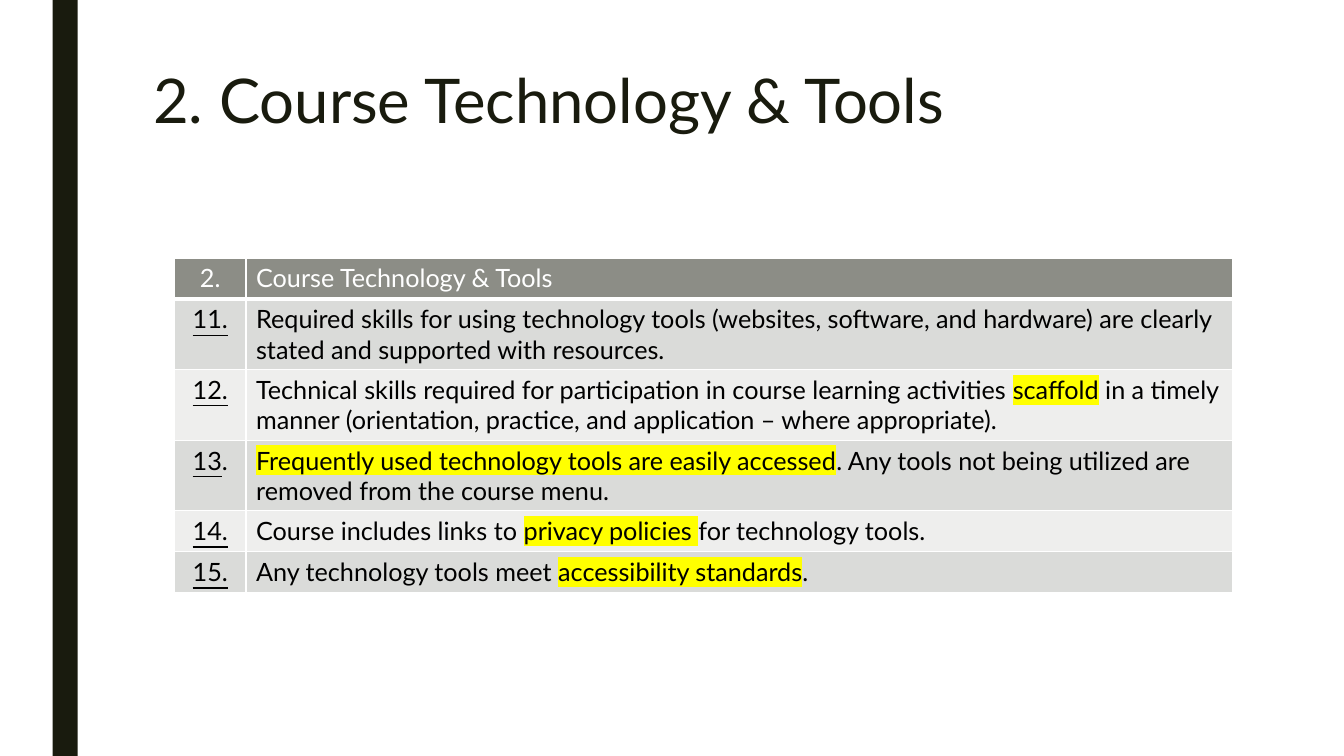
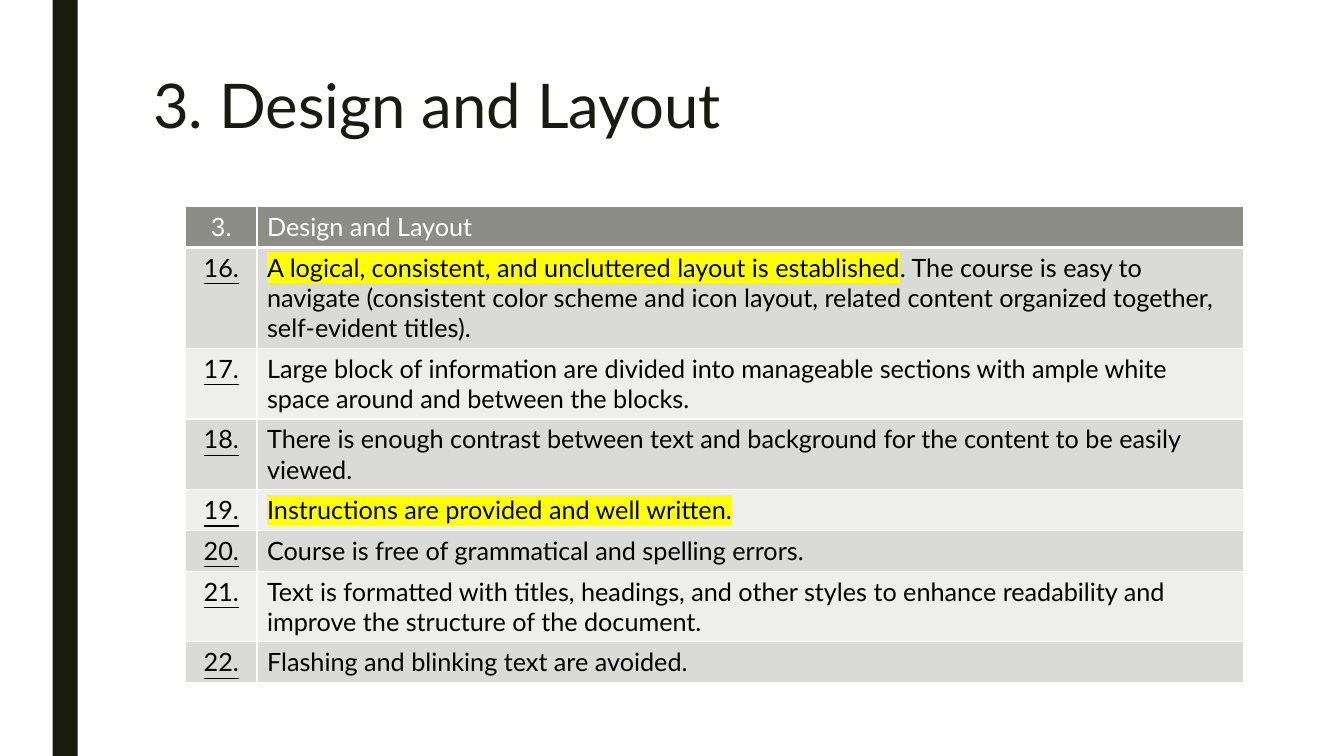
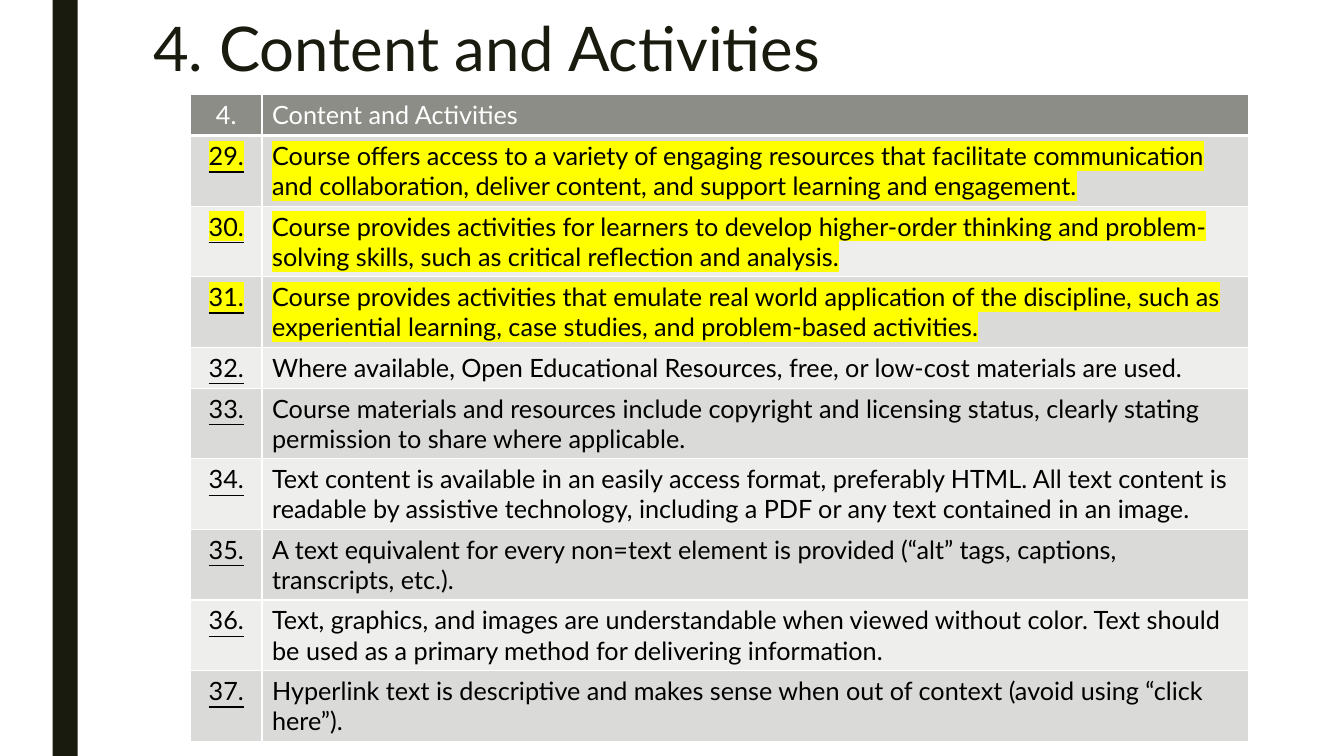
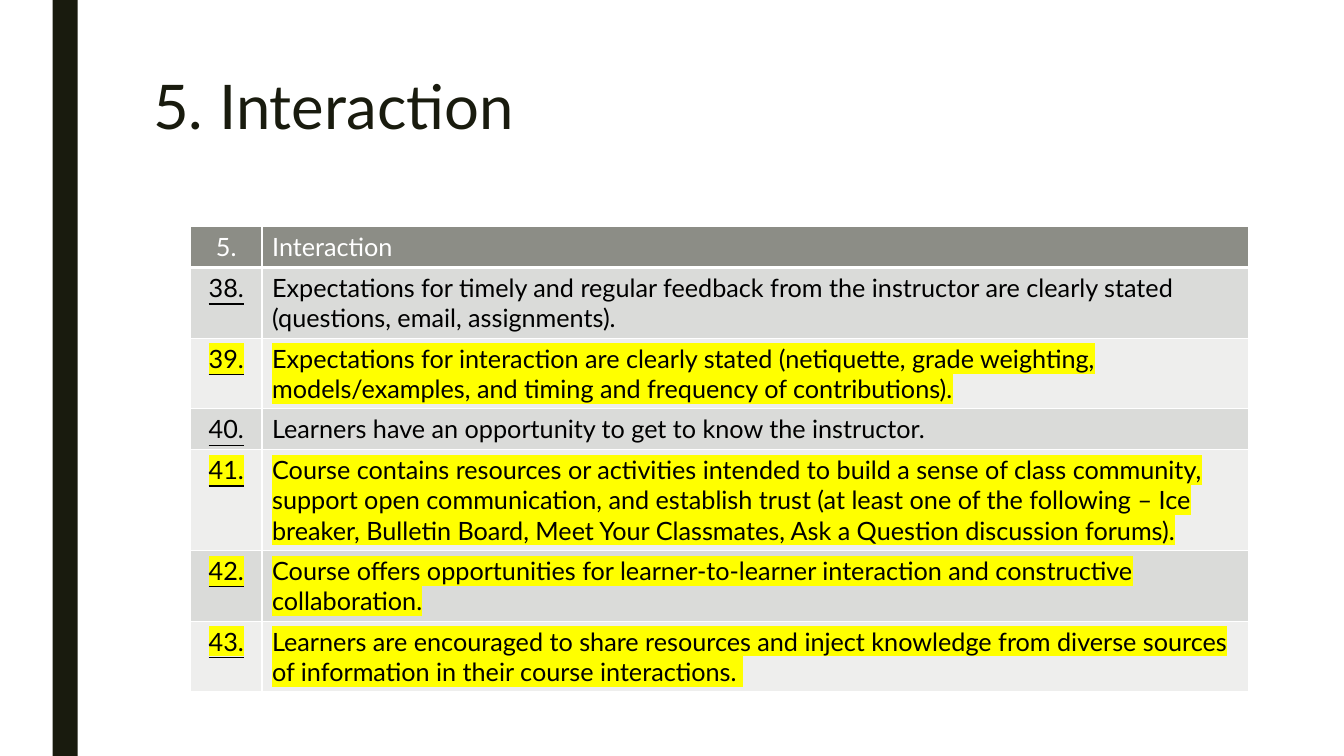
from dataclasses import dataclass

from lxml import etree
from pptx import Presentation
from pptx import util as u
from pptx.dml.color import RGBColor
from pptx.enum import shapes, text
from pptx.oxml import ns

INK = RGBColor(0x19, 0x1B, 0x0E)
BLACK = RGBColor(0, 0, 0)
WHITE = RGBColor(0xFF, 0xFF, 0xFF)
MARKER = RGBColor(0xFF, 0xFF, 0)
HEADER_FILL = RGBColor(0x8C, 0x8D, 0x86)
BAND_FILLS = RGBColor(0xDA, 0xDB, 0xD9), RGBColor(0xEE, 0xEE, 0xED)

WIDTH, HEIGHT = u.Inches(13.33), u.Inches(7.5)
GRID_COLUMNS, GRID_ROWS = 128, 72

BAR_LEFT, BAR_COLUMNS = 5, 2.4
TITLE_LEFT, TITLE_COLUMNS, TITLE_ROWS = 13.63, 100.8, 15.55
NUMBER_COLUMNS = 6.82
CRITERION_COLUMNS = TITLE_COLUMNS - NUMBER_COLUMNS
LINE_ROWS = 3.89

TITLE_FONT = {"name": "Lato", "size": u.Pt(44), "bold": False}
TABLE_FONT = {"name": "Lato", "size": u.Pt(18), "bold": False}


@dataclass
class Criterion:
    """One table row; text between bars is highlighted."""
    wording: str
    number_marked: bool = False
    dot_underlined: bool = True


@dataclass
class Section:
    number: int
    name: str
    title_top: float
    table_left: float
    table_top: float
    first_criterion: int
    criteria: list[Criterion]


SECTIONS = [
    Section(2, "Course Technology & Tools", 6.24, 16.61, 24.58, 11, [
        Criterion("Required skills for using technology tools (websites, software, and hardware) "
                  "are clearly stated and supported with resources."),
        Criterion("Technical skills required for participation in course learning activities "
                  "|scaffold| in a timely manner (orientation, practice, and application – "
                  "where appropriate)."),
        Criterion("|Frequently used technology tools are easily accessed|. Any tools not being "
                  "utilized are removed from the course menu.", dot_underlined=False),
        Criterion("Course includes links to |privacy policies |for technology tools."),
        Criterion("Any technology tools meet |accessibility standards|."),
    ]),
    Section(3, "Design and Layout", 6.72, 17.66, 19.68, 16, [
        Criterion("|A logical, consistent, and uncluttered layout is established|. The course is "
                  "easy to navigate (consistent color scheme and icon layout, related content "
                  "organized together, self-evident titles)."),
        Criterion("Large block of information are divided into manageable sections with ample "
                  "white space around and between the blocks."),
        Criterion("There is enough contrast between text and background for the content to be "
                  "easily viewed."),
        Criterion("|Instructions are provided and well written.|"),
        Criterion("Course is free of grammatical and spelling errors."),
        Criterion("Text is formatted with titles, headings, and other styles to enhance "
                  "readability and improve the structure of the document."),
        Criterion("Flashing and blinking text are avoided."),
    ]),
    Section(4, "Content and Activities", 1.34, 18.14, 9.02, 29, [
        Criterion("|Course offers access to a variety of engaging resources that facilitate "
                  "communication and collaboration, deliver content, and support learning and "
                  "engagement.|", number_marked=True),
        Criterion("|Course provides activities for learners to develop higher-order thinking and "
                  "problem-solving skills, such as critical reflection and analysis.|",
                  number_marked=True),
        Criterion("|Course provides activities that emulate real world application of the "
                  "discipline, such as experiential learning, case studies, and problem-based "
                  "activities.|", number_marked=True),
        Criterion("Where available, Open Educational Resources, free, or low-cost materials are "
                  "used."),
        Criterion("Course materials and resources include copyright and licensing status, clearly "
                  "stating permission to share where applicable."),
        Criterion("Text content is available in an easily access format, preferably HTML. All "
                  "text content is readable by assistive technology, including a PDF or any text "
                  "contained in an image."),
        Criterion("A text equivalent for every non=text element is provided (“alt” tags, "
                  "captions, transcripts, etc.)."),
        Criterion("Text, graphics, and images are understandable when viewed without color. Text "
                  "should be used as a primary method for delivering information."),
        Criterion("Hyperlink text is descriptive and makes sense when out of context (avoid using "
                  "“click here”)."),
    ]),
    Section(5, "Interaction", 6.82, 18.14, 21.6, 38, [
        Criterion("Expectations for timely and regular feedback from the instructor are clearly "
                  "stated (questions, email, assignments)."),
        Criterion("|Expectations for interaction are clearly stated (netiquette, grade weighting, "
                  "models/examples, and timing and frequency of contributions).|",
                  number_marked=True),
        Criterion("Learners have an opportunity to get to know the instructor."),
        Criterion("|Course contains resources or activities intended to build a sense of class "
                  "community, support open communication, and establish trust (at least one of "
                  "the following – Ice breaker, Bulletin Board, Meet Your Classmates, Ask a "
                  "Question discussion forums).|", number_marked=True),
        Criterion("|Course offers opportunities for learner-to-learner interaction and "
                  "constructive collaboration.|", number_marked=True),
        Criterion("|Learners are encouraged to share resources and inject knowledge from diverse "
                  "sources of information in their course interactions. |", number_marked=True),
    ]),
]


def across(columns: float) -> u.Emu:
    return u.Emu(round(WIDTH * columns / GRID_COLUMNS))


def down(rows: float) -> u.Emu:
    return u.Emu(round(HEIGHT * rows / GRID_ROWS))


def apply(target, formats: dict) -> None:
    for name, value in formats.items():
        setattr(target, name, value)


def add_run(paragraph, wording: str, formats: dict, color: RGBColor, marked: bool = False) -> None:
    run = paragraph.add_run()
    run.text = wording
    apply(run.font, formats)
    run.font.color.rgb = color
    if marked:
        latin = run.font._element.find(ns.qn("a:latin"))
        highlight = etree.Element(ns.qn("a:highlight"))
        etree.SubElement(highlight, ns.qn("a:srgbClr"), val=str(MARKER))
        latin.addprevious(highlight)


def style_cell(cell, fill: RGBColor, borders: dict[str, float]) -> None:
    """Fill the cell and give it white borders; widths are points by side, in L, R, T, B order."""
    cell.fill.solid()
    cell.fill.fore_color.rgb = fill
    properties = cell._tc.get_or_add_tcPr()
    for position, (side, points) in enumerate(borders.items()):
        line = etree.Element(ns.qn(f"a:ln{side}"), w=str(u.Pt(points)))
        paint = etree.SubElement(line, ns.qn("a:solidFill"))
        etree.SubElement(paint, ns.qn("a:srgbClr"), val=str(WHITE))
        properties.insert(position, line)


def add_bar(slide) -> None:
    bar = slide.shapes.add_shape(shapes.MSO_SHAPE.RECTANGLE, across(BAR_LEFT), 0,
                                 across(BAR_COLUMNS), HEIGHT)
    bar.shadow.inherit = False
    bar.fill.solid()
    bar.fill.fore_color.rgb = INK
    bar.line.fill.background()


def set_title(slide, section: Section) -> None:
    title = slide.shapes.title
    apply(title, {"left": across(TITLE_LEFT), "top": down(section.title_top),
                  "width": across(TITLE_COLUMNS), "height": down(TITLE_ROWS)})
    apply(title.text_frame, {"vertical_anchor": text.MSO_ANCHOR.TOP, "word_wrap": True,
                             "auto_size": text.MSO_AUTO_SIZE.NONE})
    heading = title.text_frame.paragraphs[0]
    apply(heading, {"alignment": text.PP_ALIGN.LEFT, "line_spacing": 0.89})
    add_run(heading, f"{section.number}. {section.name}", TITLE_FONT, INK)


def add_criteria(slide, section: Section) -> None:
    row_count = len(section.criteria) + 1
    table = slide.shapes.add_table(
        row_count, 2, across(section.table_left), down(section.table_top),
        across(TITLE_COLUMNS), down(LINE_ROWS * row_count)).table
    apply(table, {"first_row": False, "horz_banding": False})
    for column, columns in zip(table.columns, (NUMBER_COLUMNS, CRITERION_COLUMNS)):
        column.width = across(columns)
    for row in table.rows:
        row.height = down(LINE_ROWS)
        row.cells[0].text_frame.paragraphs[0].alignment = text.PP_ALIGN.CENTER

    for column, wording in enumerate((f"{section.number}.", section.name)):
        cell = table.cell(0, column)
        style_cell(cell, HEADER_FILL, {"L": 1, "R": 1, "T": 1, "B": 3})
        add_run(cell.text_frame.paragraphs[0], wording, TABLE_FONT, WHITE)

    underlined = TABLE_FONT | {"underline": True}
    for index, criterion in enumerate(section.criteria):
        cells = table.rows[index + 1].cells
        for cell in cells:
            style_cell(cell, BAND_FILLS[index % 2], {"L": 1, "R": 1, "B": 1})
        label, statement = (cell.text_frame.paragraphs[0] for cell in cells)
        number = str(section.first_criterion + index)
        if criterion.dot_underlined:
            add_run(label, f"{number}.", underlined, BLACK, criterion.number_marked)
        else:
            add_run(label, number, underlined, BLACK, criterion.number_marked)
            add_run(label, ".", TABLE_FONT, BLACK, criterion.number_marked)
        for part, wording in enumerate(criterion.wording.split("|")):
            if wording:
                add_run(statement, wording, TABLE_FONT, BLACK, marked=part % 2 == 1)


def main() -> None:
    deck = Presentation()
    apply(deck, {"slide_width": WIDTH, "slide_height": HEIGHT})
    title_only = deck.slide_layouts[5]
    for section in SECTIONS:
        slide = deck.slides.add_slide(title_only)
        add_bar(slide)
        set_title(slide, section)
        add_criteria(slide, section)
    deck.save("out.pptx")


if __name__ == "__main__":
    main()
